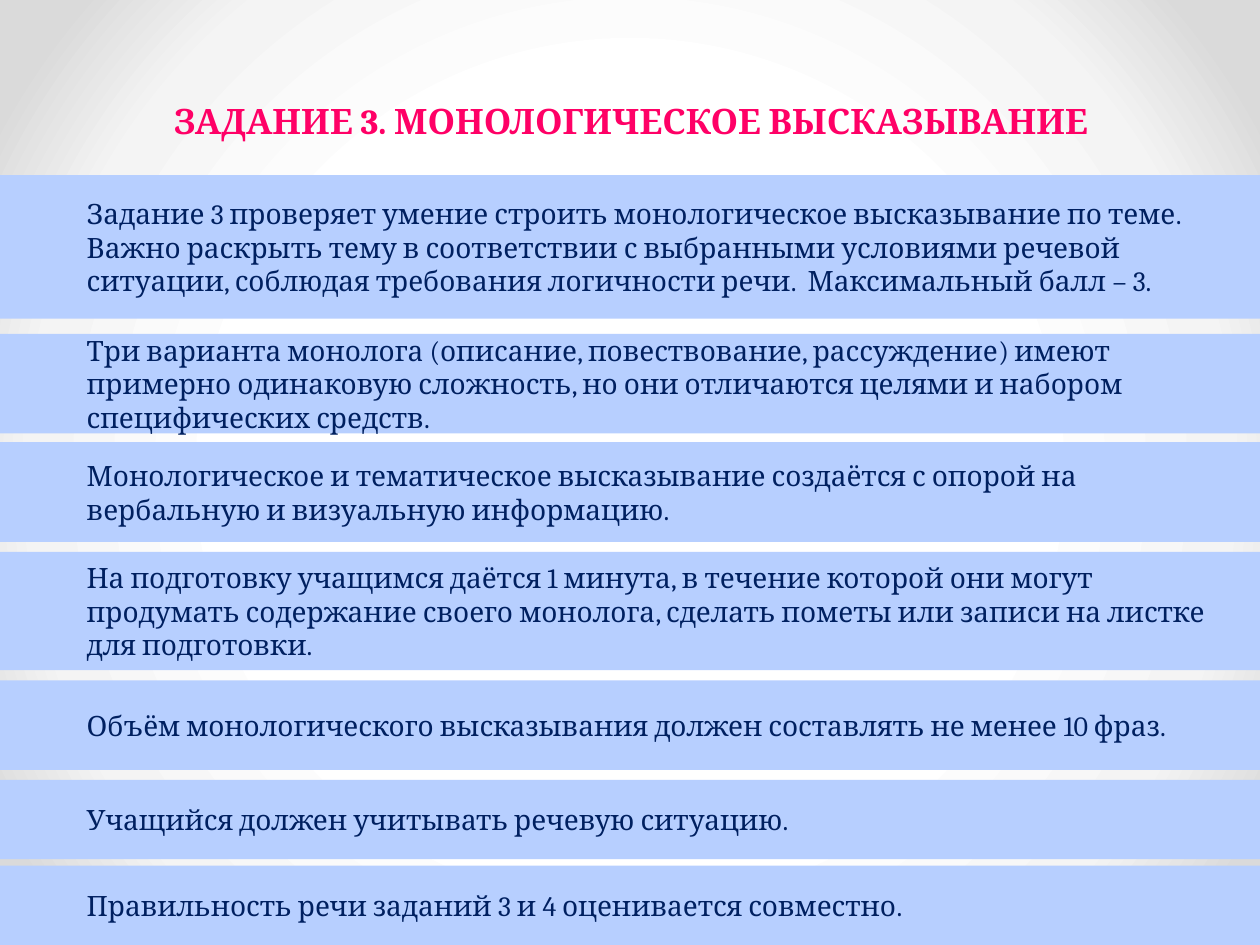
from dataclasses import dataclass

from pptx import Presentation
from pptx.dml.color import RGBColor as Rgb
from pptx.enum.shapes import MSO_SHAPE as Preset
from pptx.enum.text import MSO_ANCHOR as Anchor, PP_ALIGN as Align
from pptx.oxml import parse_xml
from pptx.oxml.ns import nsdecls, qn
from pptx.util import Inches, Pt


@dataclass(frozen=True)
class Theme:
    font: str = "Cambria"
    heading: str = "FF0066"
    body: str = "002060"
    band: str = "B7CFFF"
    backdrop: tuple = ((50, "FFFFFF"), (76, "F4F4F4"), (92, "DADADA"))
    heading_size: int = 20
    body_size: int = 16
    heading_spacing: int = 58


class SlideBuilder:
    def __init__(self, slide, theme):
        self.slide = slide
        self.theme = theme

    def backdrop(self):
        self.slide.background.fill.gradient()
        gradient = self.slide.element.find(".//" + qn("a:gradFill"))
        stops = "".join(
            f'<a:gs pos="{position * 1000}"><a:srgbClr val="{color}"/></a:gs>'
            for position, color in self.theme.backdrop
        )
        radial = parse_xml(
            f'<a:gradFill {nsdecls("a")} rotWithShape="1"><a:gsLst>{stops}</a:gsLst>'
            '<a:path path="circle">'
            '<a:fillToRect l="50000" t="50000" r="50000" b="50000"/>'
            "</a:path></a:gradFill>"
        )
        gradient.getparent().replace(gradient, radial)

    def set_wording(self, frame, wording, size, color, bold=False):
        frame.word_wrap = True
        frame.vertical_anchor = Anchor.MIDDLE
        frame.text = wording
        paragraph = frame.paragraphs[0]
        paragraph.alignment = Align.LEFT
        font = paragraph.runs[0].font
        font.name = self.theme.font
        font.size = Pt(size)
        font.bold = bold
        font.color.rgb = Rgb.from_string(color)
        return paragraph

    def heading(self, wording, left, top, width, height):
        box = self.slide.shapes.add_textbox(
            Inches(left), Inches(top), Inches(width), Inches(height)
        )
        frame = box.text_frame
        frame.margin_left = frame.margin_right = 0
        frame.margin_top = frame.margin_bottom = 0
        theme = self.theme
        paragraph = self.set_wording(
            frame, wording, theme.heading_size, theme.heading, bold=True
        )
        paragraph.line_spacing = Pt(theme.heading_spacing)

    def band(self, wording, top, height):
        strip = self.slide.shapes.add_shape(
            Preset.RECTANGLE, 0, Inches(top), Inches(10), Inches(height)
        )
        strip.shadow.inherit = False
        strip.fill.solid()
        strip.fill.fore_color.rgb = Rgb.from_string(self.theme.band)
        strip.line.fill.background()
        paragraph = self.set_wording(
            strip.text_frame, wording, self.theme.body_size, self.theme.body
        )
        properties = paragraph._p.get_or_add_pPr()
        properties.set("marL", str(Inches(0.59)))
        properties.set("indent", "0")


RULES = [
    (1.39, 1.14, "Задание 3 проверяет умение строить монологическое высказывание "
                 "по теме. Важно раскрыть тему в соответствии с выбранными условиями "
                 "речевой ситуации, соблюдая требования логичности речи.  "
                 "Максимальный балл – 3."),
    (2.65, 0.79, "Три варианта монолога (описание, повествование, рассуждение) имеют "
                 "примерно одинаковую сложность, но они отличаются целями и набором "
                 "специфических средств."),
    (3.51, 0.79, "Монологическое и тематическое высказывание создаётся с опорой на "
                 "вербальную и визуальную информацию."),
    (4.38, 0.94, "На подготовку учащимся даётся 1 минута, в течение которой они могут "
                 "продумать содержание своего монолога, сделать пометы или записи на "
                 "листке для подготовки."),
    (5.4, 0.71, "Объём монологического высказывания должен составлять не менее "
                "10 фраз."),
    (6.19, 0.63, "Учащийся должен учитывать речевую ситуацию."),
    (6.87, 0.63, "Правильность речи заданий 3 и 4 оценивается совместно."),
]


def main():
    deck = Presentation()
    deck.slide_width, deck.slide_height = Inches(10), Inches(7.5)
    builder = SlideBuilder(deck.slides.add_slide(deck.slide_layouts[6]), Theme())
    builder.backdrop()
    builder.heading("ЗАДАНИЕ 3. МОНОЛОГИЧЕСКОЕ ВЫСКАЗЫВАНИЕ", 1.38, 0.44, 8.12, 0.56)
    for top, height, wording in RULES:
        builder.band(wording, top, height)
    deck.save("out.pptx")


if __name__ == "__main__":
    main()
